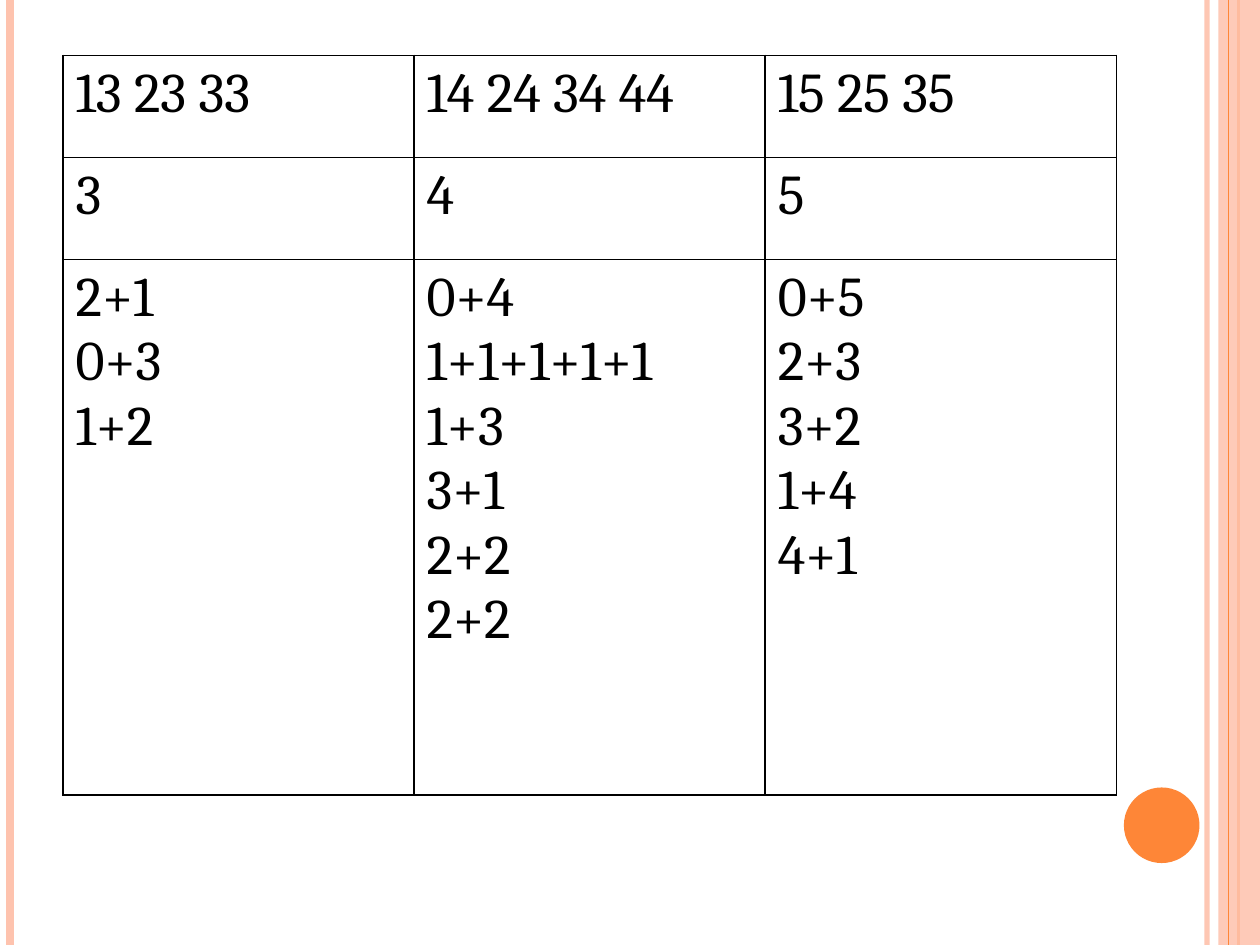
from pptx import Presentation
from pptx.dml.color import RGBColor
from pptx.enum.shapes import MSO_CONNECTOR, MSO_SHAPE
from pptx.oxml import parse_xml
from pptx.oxml.ns import nsdecls, qn
from pptx.util import Inches, Pt
from lxml.etree import SubElement

COLORS = {"orange": "FE8637", "peach": "FEC3AE", "black": "000000"}


def add_rule(s, x, color, width, alpha=100):
    """Full-height vertical line."""
    line = s.shapes.add_connector(
        MSO_CONNECTOR.STRAIGHT, Inches(x), 0, Inches(x), Inches(7.5))
    line.line.color.rgb = RGBColor.from_string(COLORS[color])
    line.line.width = Pt(width)
    SubElement(line._element.spPr, qn("a:effectLst"))
    set_alpha(line, alpha)


def set_alpha(shape, percent):
    if percent < 100:
        clr = next(shape._element.spPr.iter(qn("a:srgbClr")))
        SubElement(clr, qn("a:alpha")).set("val", str(percent * 1000))


prs = Presentation()
prs.slide_width, prs.slide_height = Inches(10), Inches(7.5)
s = prs.slides.add_slide(prs.slide_layouts[6])

# Side stripes and the orange disc
add_rule(s, 9.58, "peach", 3, 93)
add_rule(s, 0.08, "peach", 4.5)
add_rule(s, 9.83, "orange", 1.5)

band = s.shapes.add_shape(
    MSO_SHAPE.RECTANGLE, Inches(9.67), 0, Inches(0.33), Inches(7.5))
add_rule(s, 9.75, "orange", 0.75)
disc = s.shapes.add_shape(
    MSO_SHAPE.OVAL, Inches(8.92), Inches(6.25), Inches(0.6), Inches(0.6))
for sp, color, alpha in [(band, "peach", 87), (disc, "orange", 100)]:
    sp.shadow.inherit = False
    sp.fill.solid()
    sp.fill.fore_color.rgb = RGBColor.from_string(COLORS[color])
    sp.line.fill.background()
    set_alpha(sp, alpha)

# Number table: numbers, last digit, sums
rows = [
    ["13 23 33", "14 24 34 44", "15 25 35"],
    ["3", "4", "5"],
    ["2+1\n0+3\n1+2",
     "0+4\n1+1+1+1+1\n1+3\n3+1\n2+2\n2+2",
     "0+5\n2+3\n3+2\n1+4\n4+1"],
]
table = s.shapes.add_table(
    3, 3, Inches(0.5), Inches(0.44), Inches(8.36), Inches(5.87)).table
table.first_row = table.horz_banding = False
for col in table.columns:
    col.width = Inches(8.36 / 3)
for row, height in zip(table.rows, [0.81, 0.81, 4.25]):
    row.height = Inches(height)

for i, texts in enumerate(rows):
    for j, text in enumerate(texts):
        cell = table.cell(i, j)
        cell.text_frame.text = text
        for p in cell.text_frame.paragraphs:
            for r in p.runs:
                r.font.name = "Cambria"
                r.font.size = Pt(32)
                r.font.color.rgb = RGBColor.from_string(COLORS["black"])
        cell.fill.background()
        tcPr = cell._tc.get_or_add_tcPr()
        for k, side in enumerate(["lnL", "lnR", "lnT", "lnB"]):
            tcPr.insert(k, parse_xml(
                f'<a:{side} {nsdecls("a")} w="{Pt(1)}"><a:solidFill>'
                f'<a:srgbClr val="{COLORS["black"]}"/></a:solidFill></a:{side}>'))

prs.save("out.pptx")
